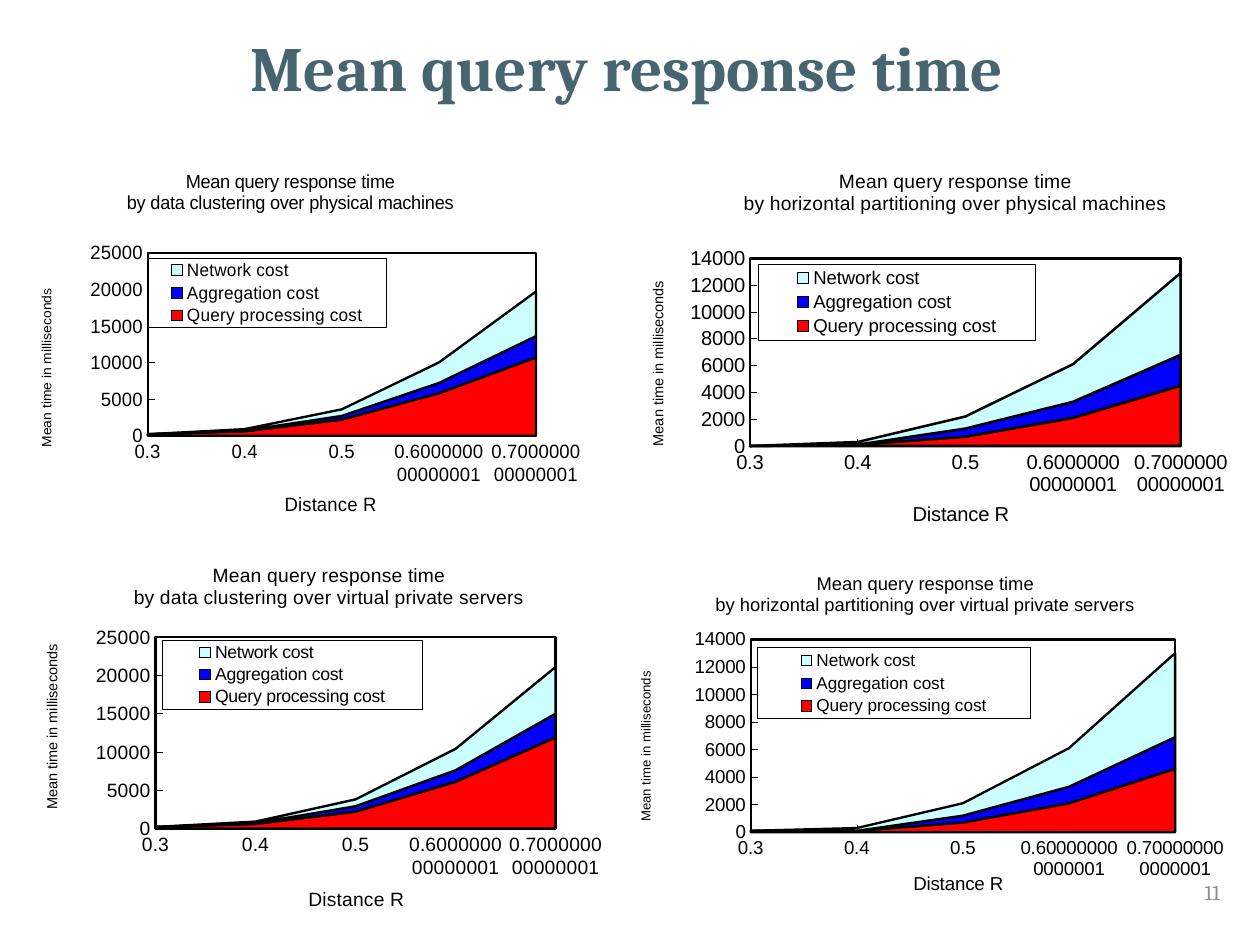
from lxml import etree
from pptx import Presentation
from pptx import util as u
from pptx.chart.data import CategoryChartData
from pptx.dml.color import RGBColor
from pptx.enum import chart as charts, text
from pptx.oxml import parse_xml
from pptx.oxml.ns import nsdecls, qn

# Content shared by the four charts
CATEGORIES = ["0.3", "0.4", "0.5", "0.600000000000001", "0.700000000000001"]
SERIES = [("Query processing cost", "FF0000"), ("Aggregation cost", "0000FF"), ("Network cost", "CCFFFF")]
NETWORK = [0, 200, 900, 2800, 6100]

# at is in inches; plot, legend and title places are fractions of the chart
CHARTS = [
    dict(title="by data clustering over physical machines",
         at=(0.23, 1.25, 4.38, 2.89), top=25000, step=5000,
         values=([200, 600, 2200, 5800, 10700], [0, 100, 500, 1400, 2900], NETWORK),
         plot=(0.224, 0.262, 0.733, 0.503), legend=(0.225, 0.276, 0.449, 0.192),
         title_at=(0.178, 0.02), x_title_at=(0.476, 0.908), y_title_at=(0.011, 0.336),
         title_size=10.8, axis_size=11, legend_size=10.2, y_title_size=7.9, line=1.38),
    dict(title="by horizontal partitioning over physical machines",
         at=(5.08, 1.09, 4.69, 3.13), top=14000, step=2000,
         values=([0, 100, 700, 2100, 4500], [0, 0, 600, 1200, 2300], NETWORK),
         plot=(0.186, 0.307, 0.729, 0.477), legend=(0.2, 0.322, 0.469, 0.193),
         title_at=(0.169, 0.066), x_title_at=(0.455, 0.914), y_title_at=(0.01, 0.358),
         title_size=11, axis_size=11.5, legend_size=10.6, y_title_size=8.3, line=1.44),
    dict(title="by data clustering over virtual private servers",
         at=(0.23, 4.38, 4.61, 2.89), top=25000, step=5000,
         values=([200, 600, 2200, 6100, 11900], [0, 100, 700, 1500, 3100], NETWORK),
         plot=(0.218, 0.234, 0.689, 0.526), legend=(0.229, 0.242, 0.449, 0.19),
         title_at=(0.174, 0.017), x_title_at=(0.475, 0.907), y_title_at=(0.019, 0.247),
         title_size=11, axis_size=11, legend_size=10.1, y_title_size=8.3, line=1.37),
    dict(title="by horizontal partitioning over virtual private servers",
         at=(5, 4.3, 4.84, 2.89), top=14000, step=2000,
         values=([100, 100, 700, 2100, 4600], [0, 0, 500, 1200, 2300], NETWORK),
         plot=(0.198, 0.268, 0.696, 0.53), legend=(0.208, 0.291, 0.449, 0.195),
         title_at=(0.134, 0.069), x_title_at=(0.459, 0.896), y_title_at=(0.008, 0.349),
         title_size=10.5, axis_size=10.7, legend_size=9.8, y_title_size=7.5, line=1.33),
]


def color(value):
    return RGBColor.from_string(value)


def style_font(font, size, name="Arial", fill="000000", bold=False):
    font.size, font.name, font.bold = u.Pt(size), name, bold
    font.color.rgb = color(fill)


def add_text(slide, content, at, align, **font):
    frame = slide.shapes.add_textbox(*map(u.Inches, at)).text_frame
    frame.word_wrap = True
    frame.vertical_anchor = text.MSO_ANCHOR.MIDDLE
    paragraph = frame.paragraphs[0]
    paragraph.alignment = align
    run = paragraph.add_run()
    run.text = content
    style_font(run.font, **font)


def place(element, box, inner=False):
    """Give a chart part a manual layout: x, y and, if known, w, h."""
    for old in element.findall(qn("c:layout")):
        element.remove(old)
    layout = parse_xml(f"<c:layout {nsdecls('c')}><c:manualLayout/></c:layout>")
    settings = [("layoutTarget", "inner")] if inner else []
    settings += [("xMode", "edge"), ("yMode", "edge")]
    settings += zip("xywh", box)
    for tag, value in settings:
        etree.SubElement(layout[0], qn(f"c:{tag}")).set("val", str(value))
    overlay = element.find(qn("c:overlay"))
    if overlay is None:
        element.insert(0, layout)
    else:
        overlay.addprevious(layout)


def shape_properties(fill, line):
    return parse_xml(
        f"<c:spPr {nsdecls('c', 'a')}><a:solidFill><a:srgbClr val='{fill}'/></a:solidFill>"
        f"<a:ln w='{u.Pt(line)}'><a:solidFill><a:srgbClr val='000000'/></a:solidFill></a:ln></c:spPr>")


def set_title(owner, title, content, size, at, rotation=0):
    owner.has_title = True
    frame = title().text_frame
    frame.text = content
    for paragraph in frame.paragraphs:
        paragraph.alignment = text.PP_ALIGN.CENTER
        style_font(paragraph.runs[0].font, size)
    element = title()._element
    body = element.find(".//" + qn("a:bodyPr"))
    body.set("rot", str(rotation * 60000))
    body.set("vert", "horz")
    place(element, at)


def add_cost_chart(slide, spec_):
    data = CategoryChartData()
    data.categories = CATEGORIES
    for (name, _), values in zip(SERIES, spec_["values"]):
        data.add_series(name, values)
    chart = slide.shapes.add_chart(
        charts.XL_CHART_TYPE.AREA_STACKED, *map(u.Inches, spec_["at"]), data).chart
    style_font(chart.font, spec_["axis_size"])
    chart.plots[0].vary_by_categories = False

    # Areas
    for series, (_, fill) in zip(chart.plots[0].series, SERIES):
        series.format.fill.solid()
        series.format.fill.fore_color.rgb = color(fill)
        series.format.line.color.rgb = color("000000")
        series.format.line.width = u.Pt(spec_["line"])

    # Axes
    category_axis, value_axis = chart.category_axis, chart.value_axis
    for axis in (category_axis, value_axis):
        axis.has_major_gridlines = False
        axis.major_tick_mark = charts.XL_TICK_MARK.INSIDE
        axis.minor_tick_mark = charts.XL_TICK_MARK.NONE
        axis.tick_labels.number_format = "General"
        axis.tick_labels.number_format_is_linked = False
        style_font(axis.tick_labels.font, spec_["axis_size"])
        axis.format.line.color.rgb = color("000000")
        axis.format.line.width = u.Pt(0.35)
    labels = category_axis._element.find(qn("c:txPr")).find(qn("a:bodyPr"))
    labels.set("rot", "0")
    labels.set("vert", "horz")
    value_axis.minimum_scale, value_axis.maximum_scale = 0, spec_["top"]
    value_axis.major_unit = spec_["step"]
    value_axis._element.find(qn("c:crossBetween")).set("val", "midCat")

    # Titles
    set_title(chart, lambda: chart.chart_title, "Mean query response time\n" + spec_["title"],
              spec_["title_size"], spec_["title_at"])
    set_title(category_axis, lambda: category_axis.axis_title, "Distance R",
              spec_["axis_size"], spec_["x_title_at"])
    set_title(value_axis, lambda: value_axis.axis_title, "Mean time in milliseconds",
              spec_["y_title_size"], spec_["y_title_at"], rotation=-90)

    # Legend and plot area
    chart.has_legend = True
    legend = chart.legend
    legend.position = charts.XL_LEGEND_POSITION.RIGHT
    legend.include_in_layout = True
    style_font(legend.font, spec_["legend_size"])
    place(legend._element, spec_["legend"])
    legend._element.find(qn("c:txPr")).addprevious(shape_properties("FFFFFF", 0.35))
    plot_area = chart._chartSpace.chart.plotArea
    place(plot_area, spec_["plot"], inner=True)
    plot_area.append(shape_properties("FFFFFF", spec_["line"]))


def main():
    presentation = Presentation()
    presentation.slide_width, presentation.slide_height = u.Inches(10), u.Inches(7.5)
    slide = presentation.slides.add_slide(presentation.slide_layouts[6])
    add_text(slide, "Mean query response time", (0.17, 0.23, 9.61, 0.6), text.PP_ALIGN.CENTER,
             size=36, name="Cambria", fill="466571", bold=True)
    for chart in CHARTS:
        add_cost_chart(slide, chart)
    add_text(slide, "11", (7.7, 6.83, 2.08, 0.5), text.PP_ALIGN.RIGHT,
             size=12, name="Cambria", fill="8C8C8C")
    presentation.save("out.pptx")


if __name__ == "__main__":
    main()
